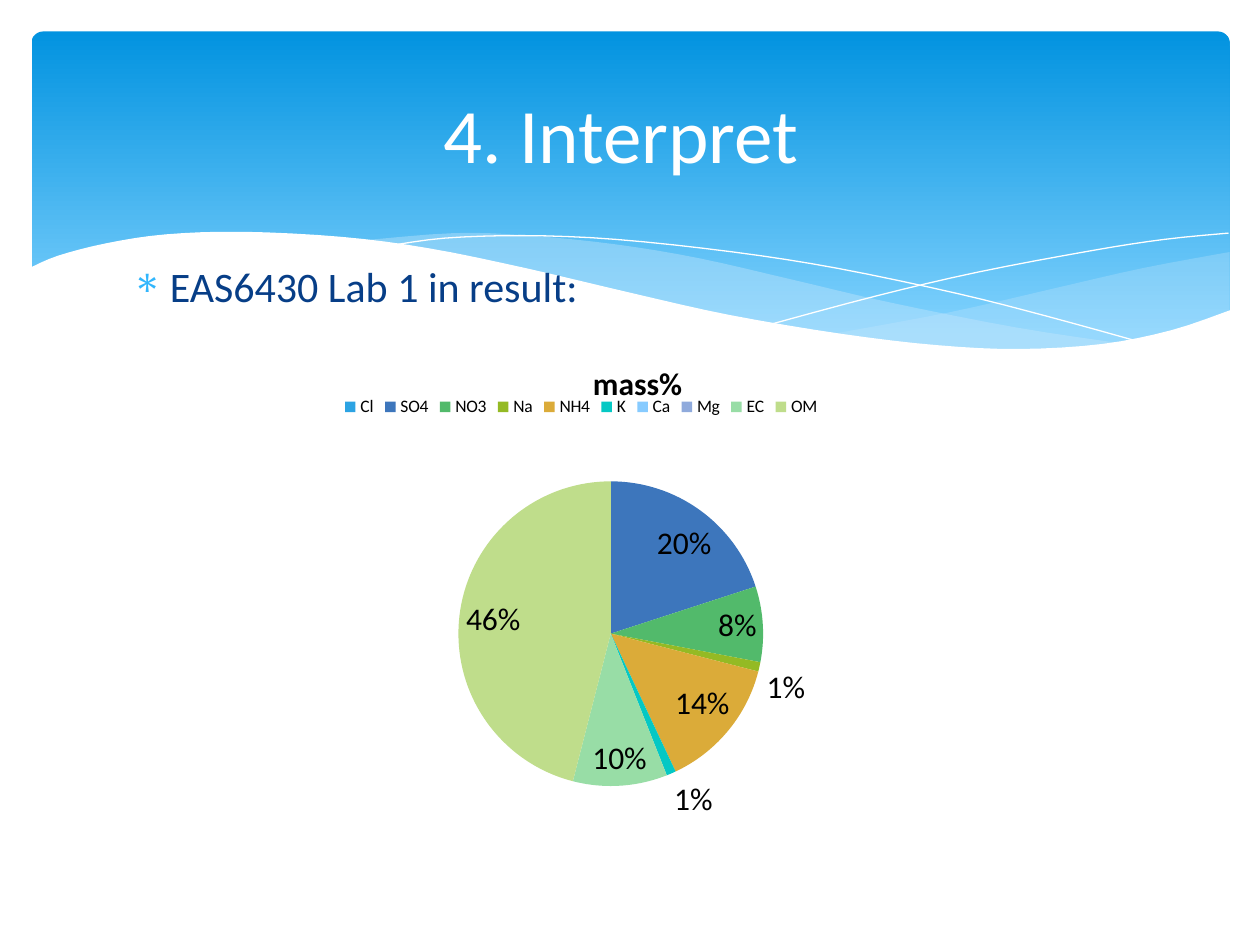
import lxml.etree
import pptx
import pptx.chart.data
import pptx.dml.color
import pptx.enum.chart
import pptx.enum.shapes
import pptx.enum.text
import pptx.oxml
import pptx.oxml.ns
import pptx.util

RGB = pptx.dml.color.RGBColor
qn = pptx.oxml.ns.qn
WHITE, BLACK = RGB(0xFF, 0xFF, 0xFF), RGB(0, 0, 0)
BANNER_TOP, BANNER_BOTTOM = RGB(0x02, 0x93, 0xE0), RGB(0x83, 0xD3, 0xFE)
PALE_BLUE, NAVY = RGB(0xC6, 0xE7, 0xFC), RGB(0x07, 0x3E, 0x87)
BULLET_BLUE = RGB(0x31, 0xB6, 0xFD)
FONT = "Calibri"

deck = pptx.Presentation()
deck.slide_width, deck.slide_height = pptx.util.Inches(10), pptx.util.Inches(7.5)
slide = deck.slides.add_slide(deck.slide_layouts[6])
COL, ROW = deck.slide_width / 10, deck.slide_height / 7.5


def draw_wave(edges, fill=None, opacity=100):
    """Draw smooth edges through their knots: an area if filled, else a hairline."""
    points = []
    for knots in edges:
        padded = [knots[0], *knots, knots[-1]]
        for a, b, c, d in zip(padded, padded[1:], padded[2:], padded[3:]):
            for t in (0, 0.25, 0.5, 0.75):
                points.append([
                    (2 * q + (r - p) * t + (2 * p - 5 * q + 4 * r - s) * t**2
                     + (3 * q - p - 3 * r + s) * t**3) / 2
                    for p, q, r, s in zip(a, b, c, d)])
        points.append(knots[-1])
    points = [(round(x * COL), round(y * ROW)) for x, y in points]
    builder = slide.shapes.build_freeform(*points[0], scale=1.0)
    builder.add_line_segments(points[1:], close=fill is not None)
    wave = builder.convert_to_shape()
    wave.shadow.inherit = False
    if fill is None:
        wave.fill.background()
        wave.line.color.rgb = WHITE
        wave.line.width = pptx.util.Pt(0)
    else:
        wave.line.fill.background()
        wave.fill.solid()
        wave.fill.fore_color.rgb = fill
        color = wave._element.spPr.find(qn("a:solidFill"))[0]
        lxml.etree.SubElement(color, qn("a:alpha"), val=str(opacity * 1000))


def write(text, left, top, width, height, size, color, align, anchor, bullet=None):
    box = slide.shapes.add_textbox(*(round(n) for n in (
        left * COL, top * ROW, width * COL, height * ROW)))
    frame = box.text_frame
    frame.word_wrap = True
    frame.vertical_anchor = anchor
    line = frame.paragraphs[0]
    line.text = text
    line.alignment = align
    line.font.size, line.font.name = pptx.util.Pt(size), FONT
    line.runs[0].font.size, line.runs[0].font.name = pptx.util.Pt(size), FONT
    line.runs[0].font.color.rgb = color
    if bullet:
        line.space_before = pptx.util.Pt(size * 0.2)
        props = line._p.get_or_add_pPr()
        indent = round(0.3 * COL)
        props.set("marL", str(indent))
        props.set("indent", str(-indent))
        tint = lxml.etree.Element(qn("a:buClr"))
        lxml.etree.SubElement(tint, qn("a:srgbClr"), val=str(BULLET_BLUE))
        mark = lxml.etree.Element(qn("a:buChar"), char=bullet)
        spacing = props.find(qn("a:spcBef"))
        spacing.addnext(tint)
        tint.addnext(mark)


# Banner
banner = slide.shapes.add_shape(
    pptx.enum.shapes.MSO_SHAPE.ROUNDED_RECTANGLE,
    round(0.25 * COL), round(0.25 * ROW), round(9.51 * COL), round(2.7 * ROW))
banner.adjustments[0] = 0.034
banner.shadow.inherit = False
banner.line.fill.background()
banner.fill.gradient()
banner.fill.gradient_angle = 270
for stop, color, position in zip(
        banner.fill.gradient_stops, (BANNER_TOP, BANNER_BOTTOM), (0, 0.9)):
    stop.color.rgb, stop.position = color, position

# Translucent waves
draw_wave([[(9.76, 2), (9.06, 2.13), (8.32, 2.3), (7.53, 2.48), (6.61, 2.65)],
           [(6.61, 2.65), (7.19, 2.72), (8.03, 2.78), (8.72, 2.74),
            (9.28, 2.63), (9.76, 2.47)]], fill=PALE_BLUE, opacity=29)
draw_wave([[(8.93, 2.73), (8.07, 2.6), (7.06, 2.4), (6.29, 2.22), (5.55, 2.05),
            (4.89, 1.94), (4.2, 1.87), (3.61, 1.85), (2.86, 1.91)],
           [(2.86, 1.91), (3.62, 2.03), (4.49, 2.22), (5.3, 2.4), (6.18, 2.58),
            (7.09, 2.72), (7.96, 2.78), (8.48, 2.77), (8.93, 2.73)]],
          fill=PALE_BLUE, opacity=40)

# Hairline curves
draw_wave([[(3.09, 1.95), (3.53, 1.89), (4.16, 1.87), (4.89, 1.9), (5.82, 2),
            (6.65, 2.13), (7.6, 2.33), (8.31, 2.51), (9.07, 2.72)]])
draw_wave([[(6.13, 2.57), (6.95, 2.35), (7.76, 2.16), (8.66, 1.99),
            (9.24, 1.9), (9.75, 1.85)]])

# White wave along the foot of the banner
draw_wave([[(9.77, 2.46), (9.3, 2.62), (8.75, 2.73), (8.09, 2.77), (7.44, 2.74),
            (6.68, 2.65), (5.79, 2.5), (5.03, 2.33), (4.18, 2.13), (3.4, 1.97),
            (2.71, 1.88), (1.93, 1.84), (1.32, 1.86), (0.85, 1.93),
            (0.46, 2.03), (0.23, 2.13)],
           [(0.23, 3.29), (9.77, 3.29)]], fill=WHITE)

# Title and body
write("4. Interpret ", 0.5, 0.37, 9, 1.37, size=44, color=WHITE,
      align=pptx.enum.text.PP_ALIGN.CENTER, anchor=pptx.enum.text.MSO_ANCHOR.MIDDLE)
write("EAS6430 Lab 1 in result:", 0.95, 2.02, 8.1, 4.68, size=24, color=NAVY,
      align=pptx.enum.text.PP_ALIGN.LEFT, anchor=pptx.enum.text.MSO_ANCHOR.TOP,
      bullet="∗")

# Mass share pie
species = [
    ("Cl", 0, RGB(0x2C, 0xA3, 0xE3)), ("SO4", 20, RGB(0x3D, 0x76, 0xBC)),
    ("NO3", 8, RGB(0x52, 0xBA, 0x6B)), ("Na", 1, RGB(0x94, 0xBA, 0x24)),
    ("NH4", 14, RGB(0xDB, 0xAB, 0x39)), ("K", 1, RGB(0x05, 0xC8, 0xC4)),
    ("Ca", 0, RGB(0x87, 0xCB, 0xFF)), ("Mg", 0, RGB(0x8F, 0xAA, 0xDC)),
    ("EC", 10, RGB(0x98, 0xDD, 0xA6)), ("OM", 46, RGB(0xBF, 0xDD, 0x8B)),
]
masses = pptx.chart.data.CategoryChartData()
masses.categories = [name for name, _, _ in species]
masses.add_series("mass%", [share for _, share, _ in species])
pie = slide.shapes.add_chart(
    pptx.enum.chart.XL_CHART_TYPE.PIE, round(0.35 * COL), round(2.57 * ROW),
    round(9.37 * COL), round(4.17 * ROW), masses).chart
pie.font.size, pie.font.name = pptx.util.Pt(10), FONT
pie.font.color.rgb = BLACK

pie.has_title = True
heading = pie.chart_title.text_frame
heading.text = "mass%"
heading_font = heading.paragraphs[0].runs[0].font
heading_font.size, heading_font.bold, heading_font.name = pptx.util.Pt(18), True, FONT
heading_font.color.rgb = BLACK

pie.has_legend = True
pie.legend.position = pptx.enum.chart.XL_LEGEND_POSITION.TOP
pie.legend.include_in_layout = False

plot = pie.plots[0]
plot.vary_by_categories = True
for index, (_, _, color) in enumerate(species):
    wedge = plot.series[0].points[index].format
    wedge.fill.solid()
    wedge.fill.fore_color.rgb = color

plot.has_data_labels = True
shares = plot.data_labels
shares.show_percentage, shares.show_value = True, False
shares.number_format, shares.number_format_is_linked = "0%;;;", False
shares.position = pptx.enum.chart.XL_LABEL_POSITION.BEST_FIT
shares.font.size, shares.font.name = pptx.util.Pt(18), FONT
shares.font.color.rgb = BLACK

# Places of the chart parts, as shares of the chart's size
plot_area = pie._chartSpace.find(".//" + qn("c:plotArea"))
for part, slot, place in (
        (pie.chart_title._element, 1, {"x": 0.46, "y": 0.06}),
        (pie.legend._element, 1, {"x": 0.25, "y": 0.13}),
        (plot_area, 0, {"x": 0.35, "y": 0.3, "w": 0.26, "h": 0.58})):
    for old in part.findall(qn("c:layout")):
        part.remove(old)
    layout = lxml.etree.Element(qn("c:layout"))
    manual = lxml.etree.SubElement(layout, qn("c:manualLayout"))
    if part is plot_area:
        lxml.etree.SubElement(manual, qn("c:layoutTarget"), val="inner")
    for axis in "xy":
        lxml.etree.SubElement(manual, qn(f"c:{axis}Mode"), val="edge")
    for key, value in place.items():
        lxml.etree.SubElement(manual, qn(f"c:{key}"), val=str(value))
    part.insert(slot, layout)

deck.save("out.pptx")
